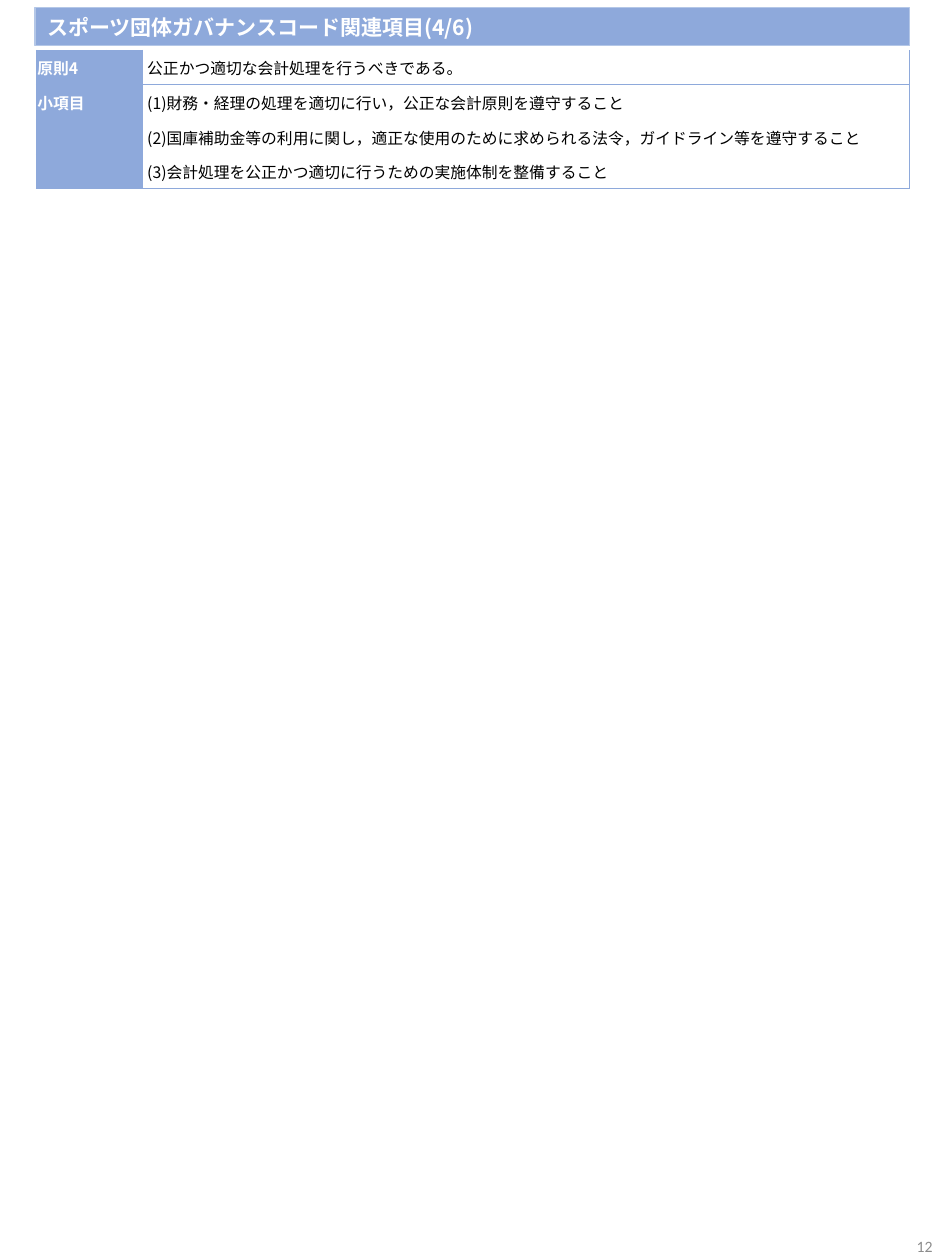
from dataclasses import dataclass

from lxml import etree
from pptx import Presentation
from pptx.dml.color import RGBColor
from pptx.enum import shapes, text
from pptx.oxml import ns
from pptx.util import Pt

BLUE, WHITE, BLACK, GREY = "8EA9DB", "FFFFFF", "000000", "8C8C8C"
JAPANESE, LATIN = "Noto Sans CJK JP", "Calibri"
LABEL_COLS, LABEL_WIDTH, TEXT_WIDTH, ROW_HEIGHT = 3, 20.2, 438.3, 19.8


@dataclass
class Row:
    label: str
    body: str
    borders: str


ROWS = [
    Row("原則4", "公正かつ適切な会計処理を行うべきである。", "LRB"),
    Row("小項目", "(1)財務・経理の処理を適切に行い，公正な会計原則を遵守すること", "LRT"),
    Row("", "(2)国庫補助金等の利用に関し，適正な使用のために求められる法令，ガイドライン等を遵守すること", "LR"),
    Row("", "(3)会計処理を公正かつ適切に行うための実施体制を整備すること", "LRB"),
]


def rgb(value: str) -> RGBColor:
    return RGBColor.from_string(value)


def write(tf, content: str, size: float, font: str, color: str, bold: bool = False) -> None:
    """Set one paragraph of text and its Latin and East Asian font."""
    tf.text = content
    p = tf.paragraphs[0]
    for r in p.runs:
        r.font.size, r.font.name, r.font.bold = Pt(size), font, bold
        r.font.color.rgb = rgb(color)
        ea = etree.Element(ns.qn("a:ea"), typeface=font)
        r.font._element.find(ns.qn("a:latin")).addnext(ea)
    if not content:
        etree.SubElement(p._p, ns.qn("a:endParaRPr"), sz=str(size * 100))


def set_borders(cell, sides: str) -> None:
    """Draw the named sides in blue and hide the others."""
    tc_pr = cell._tc.get_or_add_tcPr()
    for i, side in enumerate("LRTB"):
        ln = etree.Element(ns.qn(f"a:ln{side}"), w=str(Pt(0.5)))
        if side in sides:
            fill = etree.SubElement(ln, ns.qn("a:solidFill"))
            etree.SubElement(fill, ns.qn("a:srgbClr"), val=BLUE)
        else:
            etree.SubElement(ln, ns.qn("a:noFill"))
        tc_pr.insert(i, ln)


def fill_cell(cell, content: str, is_label: bool, borders: str) -> None:
    cell.vertical_anchor = text.MSO_ANCHOR.MIDDLE
    cell.margin_left = Pt(0.7 if is_label else 2.9)
    cell.margin_top = cell.margin_right = Pt(0.7)
    cell.margin_bottom = 0
    if is_label:
        cell.fill.solid()
        cell.fill.fore_color.rgb = rgb(BLUE)
    else:
        cell.fill.background()
    set_borders(cell, borders)
    write(cell.text_frame, content, 9, JAPANESE, WHITE if is_label else BLACK, is_label)


def add_title(s, content: str) -> None:
    bar = s.shapes.add_shape(shapes.MSO_SHAPE.RECTANGLE, Pt(20), Pt(4.5), Pt(499.7), Pt(21.6))
    bar.shadow.inherit = False
    bar.fill.solid()
    bar.fill.fore_color.rgb = rgb(BLUE)
    bar.line.color.rgb = rgb("B4C7E7")
    bar.line.width = Pt(0.75)
    tf = bar.text_frame
    tf.vertical_anchor = text.MSO_ANCHOR.MIDDLE
    tf.margin_top = tf.margin_bottom = 0
    write(tf, content, 12, JAPANESE, WHITE, True)
    tf.paragraphs[0].alignment = text.PP_ALIGN.LEFT


def add_principles(s, rows: list[Row]) -> None:
    table = s.shapes.add_table(
        len(rows), LABEL_COLS + 1, Pt(20.7), Pt(28.7),
        Pt(LABEL_COLS * LABEL_WIDTH + TEXT_WIDTH), Pt(len(rows) * ROW_HEIGHT)).table
    table.first_row = table.horz_banding = False
    for i, column in enumerate(table.columns):
        column.width = Pt(LABEL_WIDTH if i < LABEL_COLS else TEXT_WIDTH)
    for i, row in enumerate(rows):
        table.rows[i].height = Pt(ROW_HEIGHT)
        for j in range(LABEL_COLS):
            fill_cell(table.cell(i, j), row.label if j == 0 else "", True, "LRTB")
        fill_cell(table.cell(i, LABEL_COLS), row.body, False, row.borders)
        if row.label:
            table.cell(i, 0).merge(table.cell(i, 1))


def add_page_number(s, number: str) -> None:
    tf = s.shapes.add_textbox(Pt(500.4), Pt(697), Pt(39.6), Pt(23.8)).text_frame
    tf.word_wrap = True
    tf.vertical_anchor = text.MSO_ANCHOR.BOTTOM
    write(tf, number, 9, LATIN, GREY)
    tf.paragraphs[0].alignment = text.PP_ALIGN.RIGHT


def main() -> None:
    prs = Presentation()
    prs.slide_width, prs.slide_height = Pt(540), Pt(720)
    s = prs.slides.add_slide(prs.slide_layouts[6])
    add_title(s, "スポーツ団体ガバナンスコード関連項目(4/6)")
    add_page_number(s, "12")
    add_principles(s, ROWS)
    prs.save("out.pptx")


if __name__ == "__main__":
    main()
